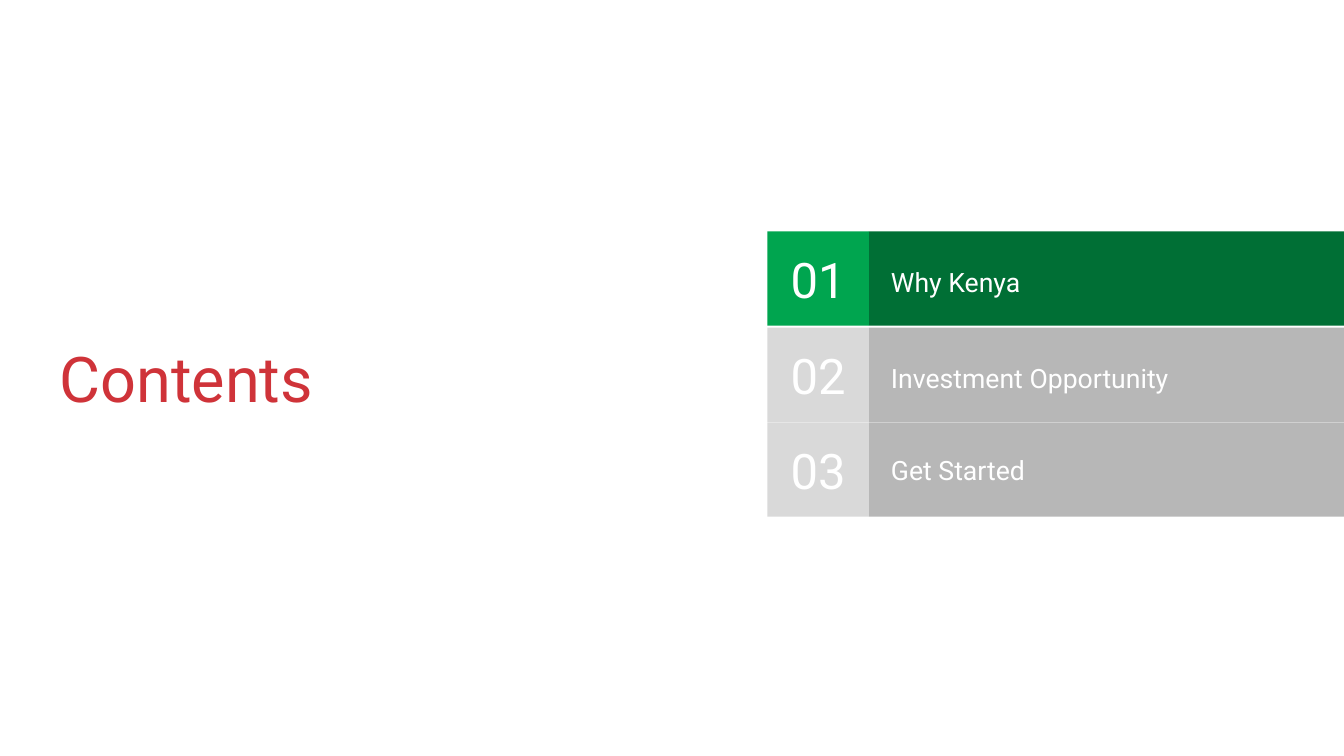
import pptx
import pptx.util
import pptx.dml.color
import pptx.enum.shapes
import pptx.enum.text
from dataclasses import dataclass

Inches = pptx.util.Inches
ALIGN = pptx.enum.text.PP_ALIGN


@dataclass(frozen=True)
class Theme:
    font: str = "Roboto"
    title_color: str = "CF3339"
    text_color: str = "FFFFFF"
    active_number: str = "00A54F"
    active_bar: str = "006F35"
    idle_number: str = "D9D9D9"
    idle_bar: str = "B7B7B7"
    title_size: int = 90
    number_size: int = 70
    label_size: int = 38
    inset: float = 0.27


theme = Theme()


def write_text(shape, text, size, color=theme.text_color, align=ALIGN.LEFT, spacing=1.0):
    frame = shape.text_frame
    frame.word_wrap = True
    frame.vertical_anchor = pptx.enum.text.MSO_ANCHOR.MIDDLE
    frame.margin_left = frame.margin_right = Inches(theme.inset)
    frame.margin_top = frame.margin_bottom = Inches(theme.inset)
    paragraph = frame.paragraphs[0]
    paragraph.alignment = align
    paragraph.line_spacing = spacing
    run = paragraph.add_run()
    run.text = text
    run.font.name = theme.font
    run.font.size = pptx.util.Pt(size)
    run.font.color.rgb = pptx.dml.color.RGBColor.from_string(color)


def add_block(shapes, left, top, width, height, color):
    block = shapes.add_shape(pptx.enum.shapes.MSO_SHAPE.RECTANGLE,
                             Inches(left), Inches(top), Inches(width), Inches(height))
    block.shadow.inherit = False
    block.fill.solid()
    block.fill.fore_color.rgb = pptx.dml.color.RGBColor.from_string(color)
    block.line.fill.background()
    return block


slide_width, slide_height = 26.67, 15
presentation = pptx.Presentation()
presentation.slide_width = Inches(slide_width)
presentation.slide_height = Inches(slide_height)
slide = presentation.slides.add_slide(presentation.slide_layouts[6])

# Columns: number, then a bar that runs to the slide's right edge
number_left, bar_left = 15.23, 17.24
label_left = bar_left + 0.17
row_height, label_height = 1.87, 1.45

# Row top, label offset, label width, number, label, is the current section
sections = [
    (4.59, 0.23, 6.93, "01", "Why Kenya", True),
    (6.5, 0.23, 7.98, "02", "Investment Opportunity", False),
    (8.38, 0.17, 8.52, "03", "Get Started", False),
]

for top, label_offset, label_width, number, label, active in sections:
    group = slide.shapes.add_group_shape()
    add_block(group.shapes, bar_left, top, slide_width - bar_left, row_height,
              theme.active_bar if active else theme.idle_bar)
    label_box = group.shapes.add_textbox(Inches(label_left), Inches(top + label_offset),
                                         Inches(label_width), Inches(label_height))
    write_text(label_box, label, theme.label_size, spacing=1.15)
    number_block = add_block(group.shapes, number_left, top, bar_left - number_left, row_height,
                             theme.active_number if active else theme.idle_number)
    write_text(number_block, number, theme.number_size, align=ALIGN.CENTER)

title_box = slide.shapes.add_textbox(Inches(0.91), Inches(5.09), Inches(9.3), Inches(5.09))
write_text(title_box, "Contents", theme.title_size, color=theme.title_color, spacing=0.8)

presentation.save("out.pptx")
